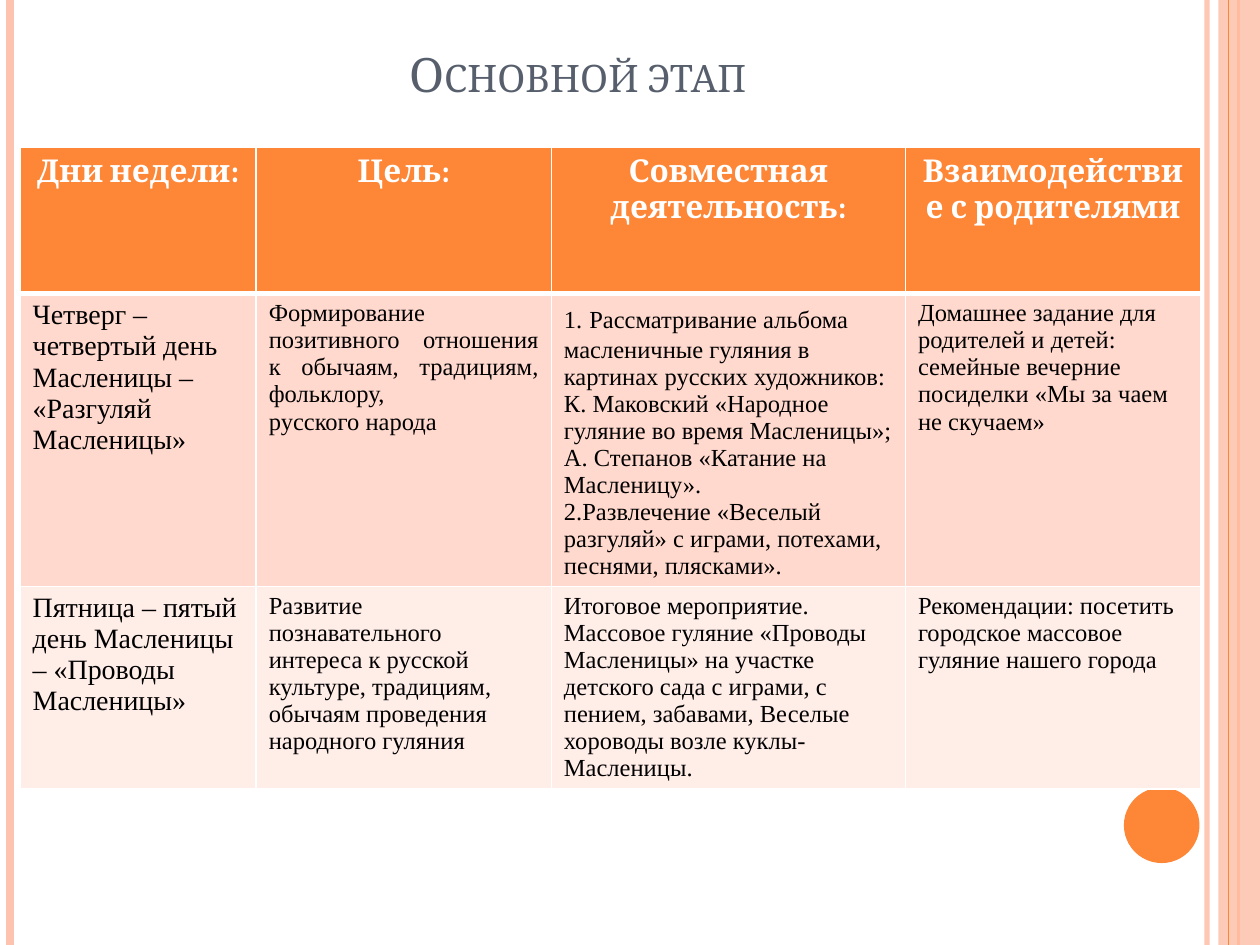
"""Build the slide on the main stage of the Maslenitsa week."""
import pptx
import pptx.util
import pptx.dml.color
import pptx.enum.shapes
import pptx.enum.text
import pptx.oxml.ns
from lxml import etree

Inches, Pt = pptx.util.Inches, pptx.util.Pt
ALIGN = pptx.enum.text.PP_ALIGN
SHAPE = pptx.enum.shapes.MSO_SHAPE
qn = pptx.oxml.ns.qn

WIDTH, HEIGHT = 10, 7.5
COLORS = {"accent": "FE8637", "peach": "FEC3AE", "title": "575F6D", "white": "FFFFFF",
          "text": "000000", "band_dark": "FFD9CE", "band_light": "FFEDE8"}
HEADING_FONT, BODY_FONT = "Cambria", "Times New Roman"

TITLE = "Основной этап"
HEADINGS = ["Дни недели:", "Цель:", "Совместная деятельность:", "Взаимодействие с родителями"]
DAYS = [
    [["Четверг – четвертый день Масленицы – «Разгуляй Масленицы»"],
     ["Формирование позитивного отношения к обычаям, традициям, фольклору,",
      "русского народа"],
     ["1. Рассматривание альбома масленичные гуляния в картинах русских художников:",
      "К. Маковский «Народное гуляние во время Масленицы»; "
      "А. Степанов «Катание на Масленицу».",
      "2.Развлечение «Веселый разгуляй» с играми, потехами, песнями, плясками»."],
     ["Домашнее задание для родителей и детей: семейные вечерние посиделки "
      "«Мы за чаем не скучаем»"]],
    [["Пятница – пятый день Масленицы – «Проводы Масленицы»"],
     ["Развитие познавательного",
      "интереса к русской культуре, традициям, обычаям проведения народного гуляния"],
     ["Итоговое мероприятие. Массовое гуляние «Проводы Масленицы» на участке детского "
      "сада с играми, с пением, забавами, Веселые хороводы возле куклы-Масленицы."],
     ["Рекомендации: посетить городское массовое гуляние нашего города"]],
]
JUSTIFIED = (1, 1)
SPACED_NUMBER = "1. "

TABLE_LEFT, TABLE_TOP, TABLE_WIDTH = 0.16, 1.17, 9.37
COLUMN_SHARES = [0.2, 0.25, 0.3, 0.25]
ROW_HEIGHTS = [1.16, 2.31, 1.61]
ROW_FILLS = ["accent", "band_dark", "band_light"]

STRIPES_BELOW = [(9.58, 3, "peach", 93), (0.08, 4.5, "peach", 100), (9.83, 1.5, "accent", 100)]
STRIPES_ABOVE = [(9.75, 0.75, "accent", 100)]
PANEL = (SHAPE.RECTANGLE, 9.67, 0, 0.33, HEIGHT, "peach", 87)
DISC = (SHAPE.OVAL, 8.92, 6.25, 0.6, 0.6, "accent", 100)


def rgb(name):
    return pptx.dml.color.RGBColor.from_string(COLORS[name])


def set_opacity(element, percent):
    if percent < 100:
        color = next(element.iter(qn("a:srgbClr")))
        etree.SubElement(color, qn("a:alpha")).set("val", str(percent * 1000))


def add_stripe(slide, x, weight, color, opacity):
    stripe = slide.shapes.add_connector(pptx.enum.shapes.MSO_CONNECTOR.STRAIGHT,
                                        Inches(x), 0, Inches(x), Inches(HEIGHT))
    stripe.line.width = Pt(weight)
    stripe.line.color.rgb = rgb(color)
    properties = stripe._element.spPr
    set_opacity(properties, opacity)
    etree.SubElement(properties, qn("a:effectLst"))


def add_figure(slide, kind, left, top, width, height, color, opacity):
    figure = slide.shapes.add_shape(kind, *map(Inches, (left, top, width, height)))
    figure.shadow.inherit = False
    figure.fill.solid()
    figure.fill.fore_color.rgb = rgb(color)
    figure.line.fill.background()
    set_opacity(figure._element.spPr, opacity)


def format_run(run, font, size, color, bold=False):
    run.font.name, run.font.size, run.font.bold = font, Pt(size), bold
    run.font.color.rgb = rgb(color)


def add_borders(cell, row):
    weights = {"L": 1, "R": 1, "T": 3 if row == 1 else 1, "B": 3 if row == 0 else 1}
    for side, weight in weights.items():
        border = etree.SubElement(cell._tc.get_or_add_tcPr(), qn(f"a:ln{side}"),
                                  w=str(Pt(weight)))
        fill = etree.SubElement(border, qn("a:solidFill"))
        etree.SubElement(fill, qn("a:srgbClr"), val=COLORS["white"])


def fill_cell(cell, row, column, paragraphs):
    add_borders(cell, row)
    cell.fill.solid()
    cell.fill.fore_color.rgb = rgb(ROW_FILLS[row])
    cell.text_frame.text = "\n".join(paragraphs)
    for paragraph in cell.text_frame.paragraphs:
        if row == 0:
            paragraph.alignment = ALIGN.CENTER
            format_run(paragraph.runs[0], HEADING_FONT, 18, "white", True)
            continue
        paragraph.alignment = ALIGN.JUSTIFY if (row, column) == JUSTIFIED else ALIGN.LEFT
        if paragraph.text.startswith(SPACED_NUMBER):
            rest = paragraph.text[len(SPACED_NUMBER):]
            paragraph.text = SPACED_NUMBER.strip()
            for part in (" ", rest):
                paragraph.add_run().text = part
        for run in paragraph.runs:
            if run.text == " ":
                format_run(run, HEADING_FONT, 18, "text")
            else:
                format_run(run, BODY_FONT, 16 if column == 0 else 14, "text")


def add_title(slide):
    title = slide.shapes.title
    title.left, title.top, title.width, title.height = map(Inches, (0.5, 0.3, 8.17, 0.56))
    frame = title.text_frame
    frame.text = TITLE
    frame.auto_size = pptx.enum.text.MSO_AUTO_SIZE.NONE
    frame.vertical_anchor = pptx.enum.text.MSO_ANCHOR.BOTTOM
    frame.paragraphs[0].alignment = ALIGN.CENTER
    run = frame.paragraphs[0].runs[0]
    format_run(run, HEADING_FONT, 27, "title")
    run._r.get_or_add_rPr().set("cap", "small")


def add_plan(slide):
    rows = [[[heading] for heading in HEADINGS]] + DAYS
    plan = slide.shapes.add_table(
        len(rows), len(HEADINGS),
        *map(Inches, (TABLE_LEFT, TABLE_TOP, TABLE_WIDTH, sum(ROW_HEIGHTS)))).table
    for column, share in zip(plan.columns, COLUMN_SHARES):
        column.width = Inches(TABLE_WIDTH * share)
    for row, height in zip(plan.rows, ROW_HEIGHTS):
        row.height = Inches(height)
    for r, row in enumerate(rows):
        for c, paragraphs in enumerate(row):
            fill_cell(plan.cell(r, c), r, c, paragraphs)


def main():
    deck = pptx.Presentation()
    deck.slide_width, deck.slide_height = Inches(WIDTH), Inches(HEIGHT)
    slide = deck.slides.add_slide(deck.slide_layouts[5])
    for stripe in STRIPES_BELOW:
        add_stripe(slide, *stripe)
    add_figure(slide, *PANEL)
    for stripe in STRIPES_ABOVE:
        add_stripe(slide, *stripe)
    add_figure(slide, *DISC)
    add_title(slide)
    add_plan(slide)
    deck.save("out.pptx")


if __name__ == "__main__":
    main()
